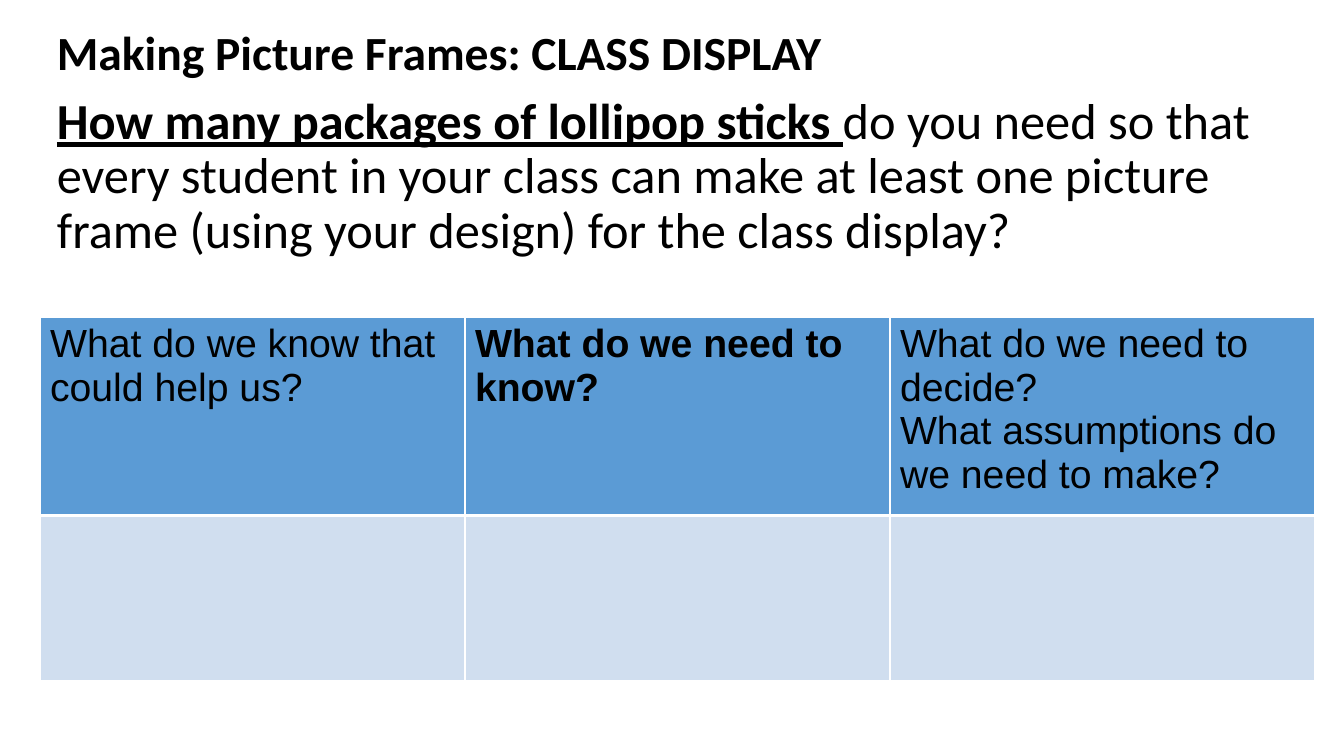
"""Build the class display slide about picture frames."""
from lxml import etree
from pptx import Presentation
from pptx import util as u
from pptx.dml.color import RGBColor
from pptx.enum import text
from pptx.oxml import ns

PX = 914400 / 100.8
INK, WHITE, HEAD, BODY = "000000", "FFFFFF", "5B9BD5", "D0DEEF"


def px(*nums):
    return [u.Emu(round(n * PX)) for n in nums]


def put(para, words, size=28, font="Arial", bold=False, line=False):
    run = para.add_run()
    run.text = words
    run.font.size = u.Pt(size)
    run.font.name = font
    run.font.bold = bold
    run.font.underline = line
    run.font.color.rgb = RGBColor.from_string(INK)


deck = Presentation()
deck.slide_width, deck.slide_height = px(1344, 756)
slide = deck.slides.add_slide(deck.slide_layouts[6])

frame = slide.shapes.add_textbox(*px(47, 24, 1269, 245)).text_frame
frame.word_wrap = True
frame.vertical_anchor = text.MSO_ANCHOR.TOP
title = frame.paragraphs[0]
task = frame.add_paragraph()
title.line_spacing = task.line_spacing = 0.9
task.space_before = u.Pt(11)
put(title, "Making Picture Frames: CLASS DISPLAY", 34, "Calibri", bold=True)
put(task, "How many packages of lollipop sticks ", 36, "Calibri", bold=True, line=True)
put(task, "do you need so that every student in your class can make at least one "
    "picture frame (using your design) for the class display?", 36, "Calibri")

heads = [
    ["What do we know that could help us?"],
    ["What do we need to know?"],
    ["What do we need to decide?", "What assumptions do we need to make?"],
]
grid = slide.shapes.add_table(2, 3, *px(40, 317, 1275, 351)).table
for row, high in zip(grid.rows, px(186, 165)):
    row.height = high
for col in grid.columns:
    col.width = px(425)[0]

for r, shade in enumerate([HEAD, BODY]):
    for c, asks in enumerate(heads):
        cell = grid.cell(r, c)
        props = cell._tc.get_or_add_tcPr()
        for side in "LRTB":
            thick = 3 if (r, side) in [(0, "B"), (1, "T")] else 1
            edge = etree.SubElement(props, ns.qn("a:ln" + side), w=str(u.Pt(thick)))
            paint = etree.SubElement(edge, ns.qn("a:solidFill"))
            etree.SubElement(paint, ns.qn("a:srgbClr"), val=WHITE)
        cell.fill.solid()
        cell.fill.fore_color.rgb = RGBColor.from_string(shade)
        if r == 0:
            for n, ask in enumerate(asks):
                body = cell.text_frame
                para = body.add_paragraph() if n else body.paragraphs[0]
                put(para, ask, bold=c == 1)

deck.save("out.pptx")
